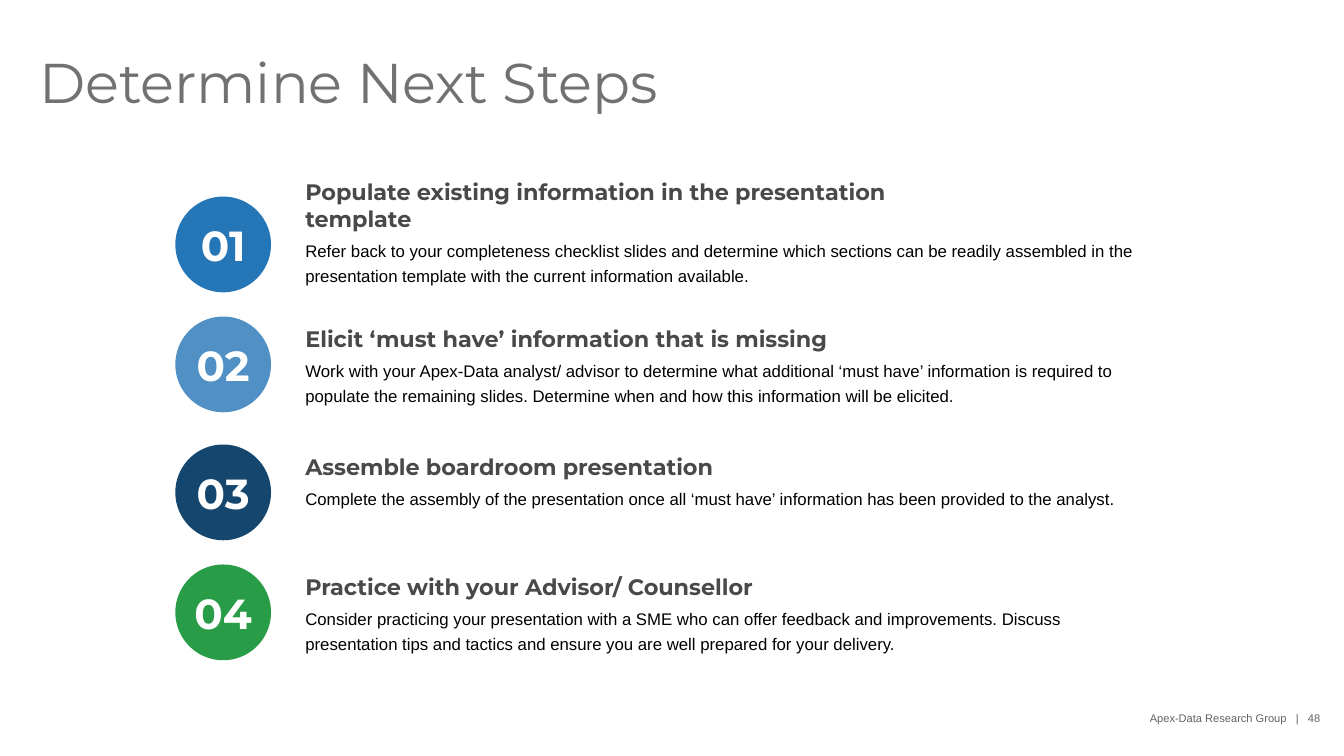
from dataclasses import dataclass

from pptx import Presentation
from pptx.dml.color import RGBColor
from pptx.enum.shapes import MSO_SHAPE
from pptx.enum.text import MSO_ANCHOR, MSO_AUTO_SIZE, PP_ALIGN
from pptx.util import Pt

OVAL = MSO_SHAPE.OVAL
TOP, MIDDLE, BOTTOM = MSO_ANCHOR.TOP, MSO_ANCHOR.MIDDLE, MSO_ANCHOR.BOTTOM
LEFT, CENTER, RIGHT = PP_ALIGN.LEFT, PP_ALIGN.CENTER, PP_ALIGN.RIGHT

TITLE = "Determine Next Steps"
FOOTER = "Apex-Data Research Group   |   48"
# circle top, circle colour, heading, body
STEPS = [
    (140.4, "2576B7", "Populate existing information in the presentation template",
     "Refer back to your completeness checklist slides and determine which sections can be "
     "readily assembled in the presentation template with the current information available."),
    (226.1, "5090C4", "Elicit ‘must have’ information that is missing",
     "Work with your Apex-Data analyst/ advisor to determine what additional ‘must have’ "
     "information is required to populate the remaining slides. Determine when and how this "
     "information will be elicited."),
    (317.5, "15466D", "Assemble boardroom presentation",
     "Complete the assembly of the presentation once all ‘must have’ information has been "
     "provided to the analyst."),
    (403.2, "299C47", "Practice with your Advisor/ Counsellor",
     "Consider practicing your presentation with a SME who can offer feedback and improvements. "
     "Discuss presentation tips and tactics and ensure you are well prepared for your delivery."),
]


@dataclass(frozen=True)
class Style:
    font: str
    size: float
    color: str
    bold: bool = False
    leading: float = 0


@dataclass(frozen=True)
class Theme:
    title: Style = Style("Montserrat", 40, "717171", leading=40)
    number: Style = Style("Montserrat", 30, "FFFFFF", bold=True)
    heading: Style = Style("Montserrat", 16, "494949", bold=True)
    body: Style = Style("Arial", 12, "000000", leading=17.5)
    footer: Style = Style("Arial", 7.9, "636363")


THEME = Theme()
CIRCLE_LEFT, CIRCLE_SIZE = 125.3, 68.4
TEXT_LEFT, HEADING_WIDTH, BODY_WIDTH = 218.2, 475, 602
HEADING_DROP, HEADING_HEIGHT = 5.8, 19.4
BODY_DROP, BODY_HEIGHT = 28.8, 35


def write(sp, text, style, align=LEFT, anchor=TOP, wrap=True):
    tf = sp.text_frame
    tf.auto_size = MSO_AUTO_SIZE.NONE
    tf.margin_left = tf.margin_top = tf.margin_right = tf.margin_bottom = 0
    tf.word_wrap = wrap
    tf.vertical_anchor = anchor
    p = tf.paragraphs[0]
    p.alignment = align
    p.space_before = Pt(0)
    if style.leading:
        p.line_spacing = Pt(style.leading)
    r = p.add_run()
    r.text = text
    r.font.name = style.font
    r.font.size = Pt(style.size)
    r.font.bold = style.bold
    r.font.color.rgb = RGBColor.from_string(style.color)


def add_text(s, box, text, style, **layout):
    write(s.shapes.add_textbox(*map(Pt, box)), text, style, **layout)


def add_step(s, number, top, color, heading, body):
    sp = s.shapes.add_shape(OVAL, Pt(CIRCLE_LEFT), Pt(top), Pt(CIRCLE_SIZE), Pt(CIRCLE_SIZE))
    sp.shadow.inherit = False
    sp.fill.solid()
    sp.fill.fore_color.rgb = RGBColor.from_string(color)
    sp.line.fill.background()
    write(sp, f"{number:02}", THEME.number, align=CENTER, anchor=MIDDLE, wrap=False)
    add_text(s, (TEXT_LEFT, top + HEADING_DROP, HEADING_WIDTH, HEADING_HEIGHT),
             heading, THEME.heading, anchor=BOTTOM)
    add_text(s, (TEXT_LEFT, top + BODY_DROP, BODY_WIDTH, BODY_HEIGHT), body, THEME.body)


def main():
    prs = Presentation()
    prs.slide_width, prs.slide_height = Pt(960.5), Pt(540)
    s = prs.slides.add_slide(prs.slide_layouts[5])
    title = s.shapes.title
    title.left, title.top, title.width, title.height = map(Pt, (28.1, 41.8, 849.6, 89.3))
    write(title, TITLE, THEME.title)
    for number, step in enumerate(STEPS, 1):
        add_step(s, number, *step)
    add_text(s, (767.1, 508.3, 176.4, 9.4), FOOTER, THEME.footer, align=RIGHT)
    prs.save("out.pptx")


if __name__ == "__main__":
    main()
